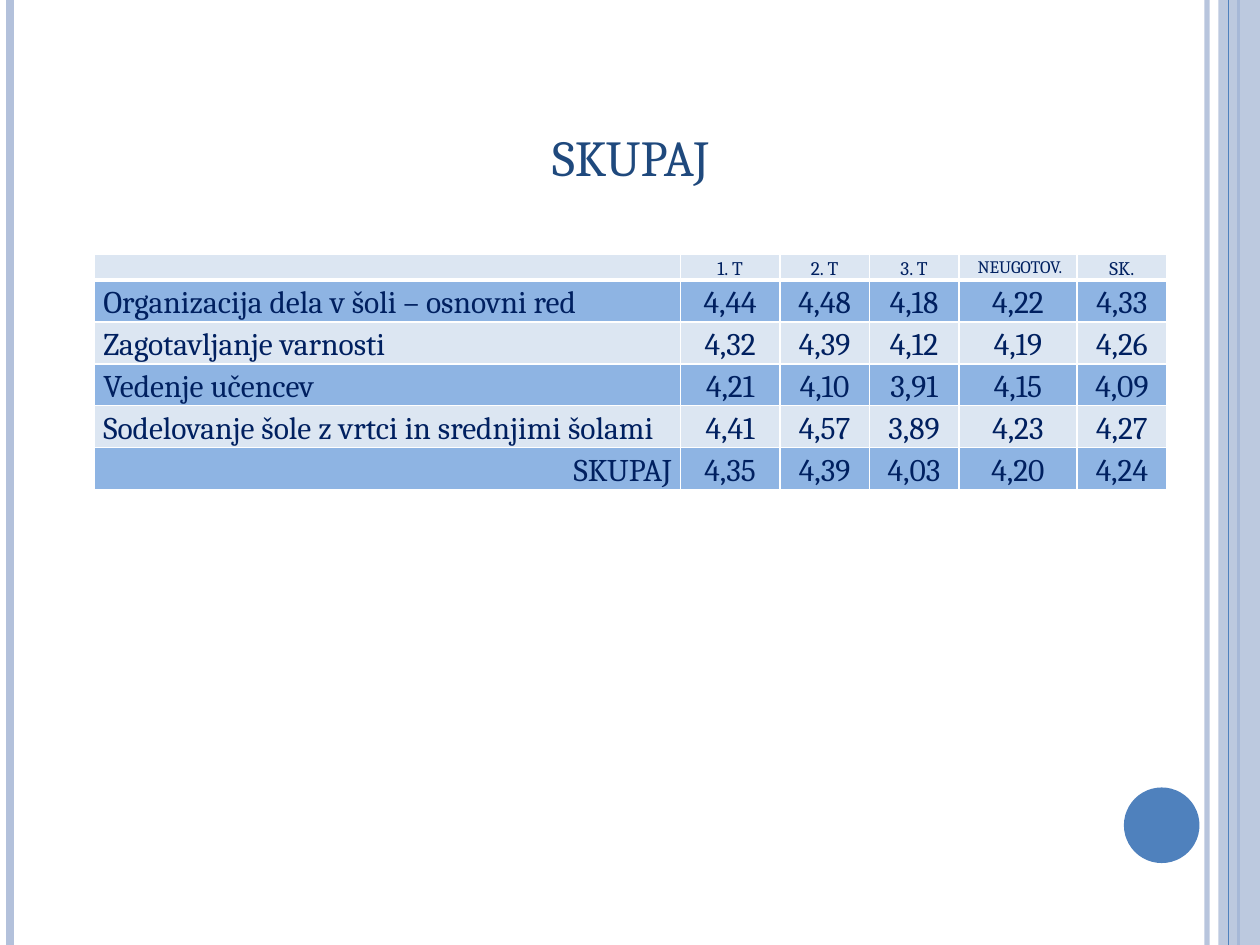
"""Build the SKUPAJ slide: a table of average ratings by period."""
from lxml.etree import SubElement
from pptx import Presentation
from pptx.dml.color import RGBColor
from pptx.enum.shapes import MSO_CONNECTOR, MSO_SHAPE
from pptx.enum.text import MSO_ANCHOR, PP_ALIGN
from pptx.oxml.ns import qn
from pptx.util import Inches, Pt

TITLE = "skupaj"
HEADER = ["", "1. T", "2. T", "3. T", " NEUGOTOV.", "SK."]
RATINGS = [
    ("Organizacija dela v šoli – osnovni red", "4,44", "4,48", "4,18", "4,22", "4,33"),
    ("Zagotavljanje varnosti", "4,32", "4,39", "4,12", "4,19", "4,26"),
    ("Vedenje učencev", "4,21", "4,10", "3,91", "4,15", "4,09"),
    ("Sodelovanje šole z vrtci in srednjimi šolami", "4,41", "4,57", "3,89", "4,23", "4,27"),
    ("SKUPAJ", "4,35", "4,39", "4,03", "4,20", "4,24"),
]
COL_WIDTHS = [4.65, 0.79, 0.71, 0.71, 0.94, 0.71]
HEADER_HEIGHT, ROW_HEIGHT = 0.2, 0.33
WIDTH, HEIGHT = 10, 7.5

THEME = {
    "font": "Cambria",
    "title": "1F497D", "text": "002060", "accent": "4F81BD", "pale": "B3C1DB",
    "band_light": "DCE6F2", "band_dark": "8EB4E3", "border": "FFFFFF",
    "title_size": 36, "header_size": 11, "long_header_size": 10, "body_size": 18,
}
BACK_RULES = [(9.58, "pale", 3, 93), (0.08, "pale", 4.5, 100), (9.83, "accent", 1.5, 100)]
FRONT_RULES = [(9.75, "accent", 0.75, 100)]


def rgb(name):
    return RGBColor.from_string(THEME[name])


def set_alpha(element, percent):
    color = next(element.iter(qn("a:srgbClr")))
    SubElement(color, qn("a:alpha"), val=str(percent * 1000))


def add_run(p, text, size, color):
    r = p.add_run()
    r.text = text
    r.font.name = THEME["font"]
    r.font.size = Pt(THEME[size])
    r.font.color.rgb = rgb(color)
    return r


def add_rules(s, rules):
    for x, color, weight, alpha in rules:
        rule = s.shapes.add_connector(
            MSO_CONNECTOR.STRAIGHT, Inches(x), 0, Inches(x), Inches(HEIGHT))
        rule.line.color.rgb = rgb(color)
        rule.line.width = Pt(weight)
        if alpha < 100:
            set_alpha(rule.line._ln, alpha)
        SubElement(rule._element.spPr, qn("a:effectLst"))


def add_plain_shape(s, kind, box, color):
    sp = s.shapes.add_shape(kind, *map(Inches, box))
    sp.shadow.inherit = False
    sp.fill.solid()
    sp.fill.fore_color.rgb = rgb(color)
    sp.line.fill.background()
    return sp


def set_borders(cell, top, bottom):
    tcPr = cell._tc.get_or_add_tcPr()
    for side, weight in (("L", 1), ("R", 1), ("T", top), ("B", bottom)):
        ln = SubElement(tcPr, qn(f"a:ln{side}"), w=str(Pt(weight)))
        fill = SubElement(ln, qn("a:solidFill"))
        SubElement(fill, qn("a:srgbClr"), val=THEME["border"])


def fill_cell(cell, text, row, col):
    set_borders(cell, 3 if row == 1 else 1, 3 if row == 0 else 1)
    cell.fill.solid()
    cell.fill.fore_color.rgb = rgb("band_dark" if row % 2 else "band_light")
    cell.margin_left = cell.margin_right = Inches(0.07)
    cell.margin_top = cell.margin_bottom = 0
    p = cell.text_frame.paragraphs[0]
    p.line_spacing = 1.15
    if col:
        p.alignment = PP_ALIGN.CENTER
    else:
        p.alignment = PP_ALIGN.RIGHT if row == len(RATINGS) else PP_ALIGN.JUSTIFY
    size = "body_size" if row else "long_header_size" if len(text) > 5 else "header_size"
    if text:
        add_run(p, text, size, "text")
    else:
        p._p.get_or_add_endParaRPr().set("sz", str(THEME[size] * 100))


def add_ratings(s):
    rows = [HEADER, *RATINGS]
    height = HEADER_HEIGHT + ROW_HEIGHT * len(RATINGS)
    table = s.shapes.add_table(
        len(rows), len(HEADER), Inches(0.75), Inches(2.02),
        Inches(sum(COL_WIDTHS)), Inches(height)).table
    table.first_row = table.horz_banding = False
    for column, width in zip(table.columns, COL_WIDTHS):
        column.width = Inches(width)
    for i, values in enumerate(rows):
        table.rows[i].height = Inches(ROW_HEIGHT if i else HEADER_HEIGHT)
        for j, text in enumerate(values):
            fill_cell(table.cell(i, j), text, i, j)


def add_title(s):
    title = s.shapes.title
    title.left, title.top, title.width, title.height = map(Inches, (0.83, 0.3, 8.35, 1.25))
    tf = title.text_frame
    tf.vertical_anchor = MSO_ANCHOR.BOTTOM
    p = tf.paragraphs[0]
    p.alignment = PP_ALIGN.CENTER
    r = add_run(p, TITLE, "title_size", "title")
    r.font._element.set("cap", "small")


def main():
    prs = Presentation()
    prs.slide_width, prs.slide_height = Inches(WIDTH), Inches(HEIGHT)
    s = prs.slides.add_slide(prs.slide_layouts[5])
    add_rules(s, BACK_RULES)
    band = add_plain_shape(s, MSO_SHAPE.RECTANGLE, (9.67, 0, 0.33, HEIGHT), "pale")
    set_alpha(band._element.spPr, 87)
    add_rules(s, FRONT_RULES)
    add_plain_shape(s, MSO_SHAPE.OVAL, (8.92, 6.25, 0.6, 0.6), "accent")
    add_title(s)
    add_ratings(s)
    prs.save("out.pptx")


if __name__ == "__main__":
    main()
